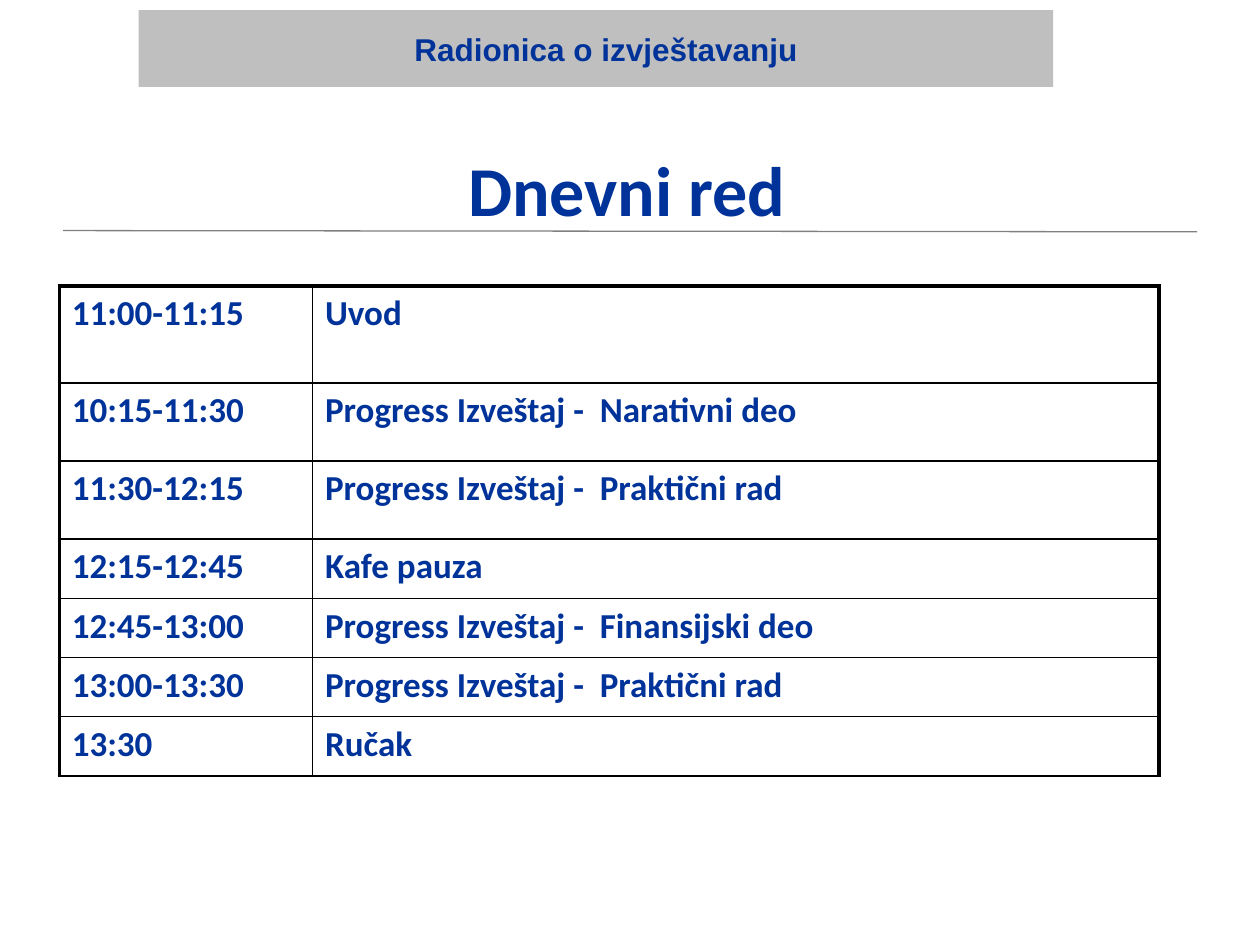
from lxml.etree import SubElement
from pptx import Presentation
from pptx.dml.color import RGBColor
from pptx.enum.shapes import MSO_CONNECTOR, MSO_SHAPE
from pptx.enum.text import MSO_ANCHOR, MSO_AUTO_SIZE, PP_ALIGN
from pptx.oxml.ns import qn
from pptx.util import Inches, Pt

HEADER = "Radionica o izvještavanju"
TITLE = "Dnevni red"
AGENDA = [  # time, topic, row height in inches
    ("11:00-11:15", "Uvod", 0.77),
    ("10:15-11:30", "Progress Izveštaj -  Narativni deo", 0.62),
    ("11:30-12:15", "Progress Izveštaj -  Praktični rad", 0.62),
    ("12:15-12:45", "Kafe pauza", 0.47),
    ("12:45-13:00", "Progress Izveštaj -  Finansijski deo", 0.47),
    ("13:00-13:30", "Progress Izveštaj -  Praktični rad", 0.47),
    ("13:30", "Ručak", 0.47),
]
COLUMN_WIDTHS = (2.01, 6.72)
THIN, THICK = Pt(1), Pt(2.25)

NAVY = RGBColor(0x00, 0x33, 0x99)
SILVER = RGBColor(0xBF, 0xBF, 0xBF)
GRAY = RGBColor(0x80, 0x80, 0x80)
BLACK = RGBColor(0x00, 0x00, 0x00)


def inches(*lengths):
    return [Inches(length) for length in lengths]


def write(frame, text, size, name):
    frame.text = text
    font = frame.paragraphs[0].font
    font.size, font.name, font.bold = Pt(size), name, True
    font.color.rgb = NAVY


def set_borders(cell, **widths):
    properties = cell._tc.get_or_add_tcPr()
    for side in ("L", "R", "T", "B"):
        line = SubElement(properties, qn(f"a:ln{side}"), w=str(widths[side]))
        fill = SubElement(line, qn("a:solidFill"))
        SubElement(fill, qn("a:srgbClr"), val=str(BLACK))


def add_header(page):
    band = page.shapes.add_shape(MSO_SHAPE.RECTANGLE, *inches(1.1, 0.08, 7.26, 0.61))
    band.shadow.inherit = False
    band.fill.solid()
    band.fill.fore_color.rgb = SILVER
    band.line.fill.background()

    box = page.shapes.add_textbox(*inches(3.19, 0.19, 3.27, 0.4))
    box.text_frame.word_wrap = False
    write(box.text_frame, HEADER, 18, "Arial")


def add_title(page):
    title = page.shapes.title
    title.left, title.top, title.width, title.height = inches(0.85, 0.48, 8.25, 1.35)
    frame = title.text_frame
    frame.margin_left = frame.margin_right = frame.margin_top = frame.margin_bottom = 0
    frame.vertical_anchor = MSO_ANCHOR.BOTTOM
    frame.auto_size = MSO_AUTO_SIZE.NONE
    write(frame, TITLE, 40, "Calibri")
    frame.paragraphs[0].alignment = PP_ALIGN.CENTER

    rule = page.shapes.add_connector(MSO_CONNECTOR.STRAIGHT, *inches(0.5, 1.83, 9.5, 1.84))
    rule.line.color.rgb = GRAY
    rule.line.width = Pt(0.75)
    SubElement(rule._element.spPr, qn("a:effectLst"))


def add_agenda(page):
    width, height = sum(COLUMN_WIDTHS), sum(row[-1] for row in AGENDA)
    table = page.shapes.add_table(
        len(AGENDA), len(COLUMN_WIDTHS), *inches(0.47, 2.27, width, height)).table
    table.first_row = table.horz_banding = False
    for column, column_width in zip(table.columns, COLUMN_WIDTHS):
        column.width = Inches(column_width)

    last = len(COLUMN_WIDTHS) - 1
    for r, (*texts, row_height) in enumerate(AGENDA):
        table.rows[r].height = Inches(row_height)
        for c, text in enumerate(texts):
            cell = table.cell(r, c)
            write(cell.text_frame, text, 20, "Calibri")
            set_borders(cell, L=THICK if c == 0 else THIN, R=THICK if c == last else THIN,
                        T=THICK if r == 0 else THIN, B=THIN)
            cell.fill.background()


def main():
    deck = Presentation()
    deck.slide_width, deck.slide_height = inches(10, 7.5)
    page = deck.slides.add_slide(deck.slide_layouts.get_by_name("Title Only"))
    add_header(page)
    add_title(page)
    add_agenda(page)
    deck.save("out.pptx")


if __name__ == "__main__":
    main()
